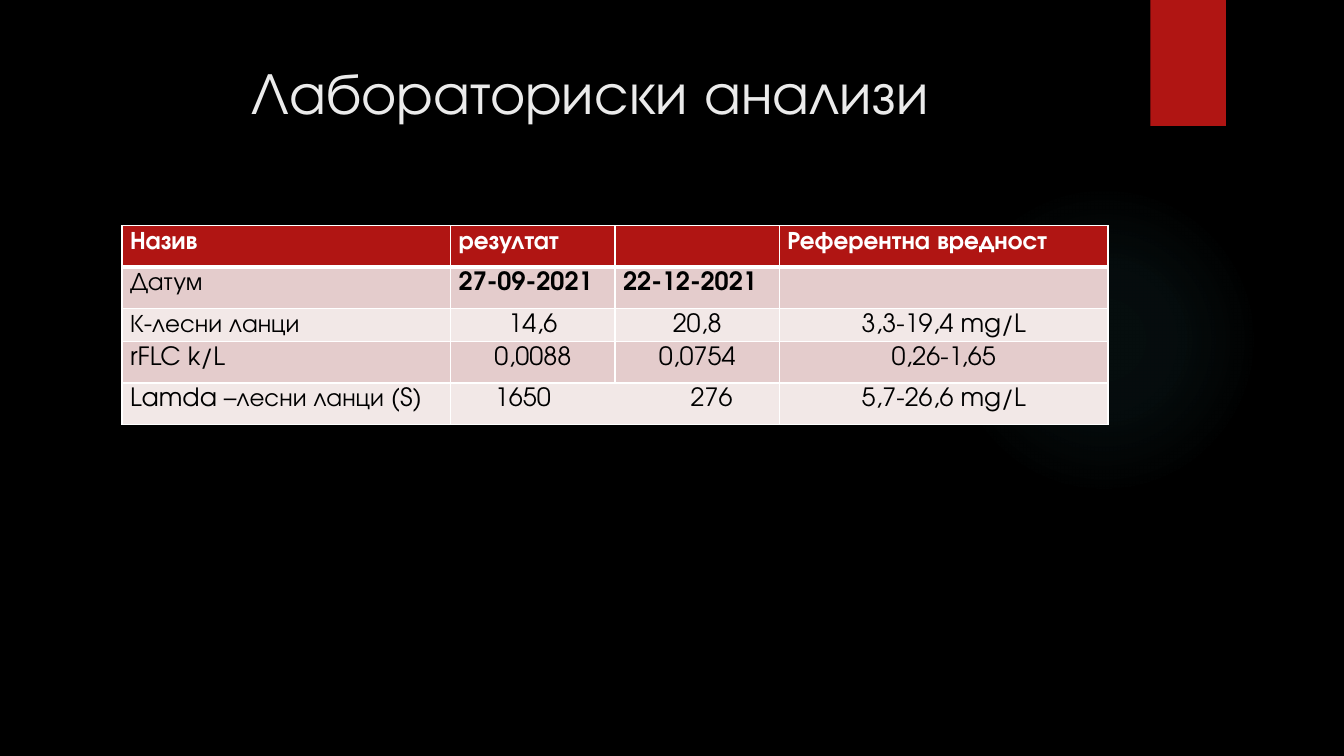
from pptx import Presentation, oxml, util as u
from pptx.dml.color import RGBColor
from pptx.enum import shapes, text
from pptx.oxml.ns import nsdecls

WIDE, HIGH = u.Inches(13.33), u.Inches(7.5)
FONT = "TeX Gyre Adventor"
HUES = {"back": "000000", "red": "B01513", "glow": "50B9C1", "title": "EBEBEB",
        "white": "FFFFFF", "ink": "000000", "dark": "E4CCCC", "light": "F2E8E7"}
ROWS = [
    ["Назив", "резултат", "", "Референтна вредност"],
    ["Датум", "27-09-2021", "22-12-2021", ""],
    ["К-лесни ланци", "14,6", "20,8", "3,3-19,4 mg/L"],
    ["rFLC k/L", "0,0088", "0,0754", "0,26-1,65"],
    ["Lamda –лесни ланци (S)", "1650\t276", "", "5,7-26,6 mg/L"],
]
SHARES = [2, 1, 1, 2]
TALL = [0.41, 0.41, 0.33, 0.41, 0.41]


def hue(name):
    return RGBColor.from_string(HUES[name])


def style(par, size, name, bold=False, align=text.PP_ALIGN.LEFT):
    par.alignment = align
    for run in par.runs:
        font = run.font
        font.name, font.size, font.bold = FONT, u.Pt(size), bold
        font.color.rgb = hue(name)


def add_shape(slide, kind, left, top, wide, high, name):
    shape = slide.shapes.add_shape(kind, *map(u.Inches, (left, top, wide, high)))
    shape.shadow.inherit = False
    shape.fill.solid()
    shape.fill.fore_color.rgb = hue(name)
    shape.line.fill.background()
    return shape


def add_glow(slide):
    oval = add_shape(slide, shapes.MSO_SHAPE.OVAL, 9.41, 1.83, 3.08, 3.08, "glow")
    stops = "".join(
        f'<a:gs pos="{pos * 1000}"><a:srgbClr val="{HUES["glow"]}">'
        f'<a:alpha val="{alpha * 1000}"/></a:srgbClr></a:gs>'
        for pos, alpha in [(0, 7), (36, 6), (69, 0), (100, 0)])
    grad = oxml.parse_xml(
        f'<a:gradFill {nsdecls("a")}><a:gsLst>{stops}</a:gsLst><a:path path="circle">'
        '<a:fillToRect l="50000" t="50000" r="50000" b="50000"/></a:path></a:gradFill>')
    props = oval._element.spPr
    solid = props.find(oxml.ns.qn("a:solidFill"))
    props.replace(solid, grad)


def set_title(slide, words):
    title = slide.shapes.title
    title.left, title.top = u.Inches(0.71), u.Inches(0.5)
    title.width, title.height = u.Inches(10.29), u.Inches(1.53)
    frame = title.text_frame
    frame.text = words
    frame.vertical_anchor = text.MSO_ANCHOR.TOP
    style(frame.paragraphs[0], 42, "title", align=text.PP_ALIGN.CENTER)


def set_edges(cell, row):
    props = cell._tc.get_or_add_tcPr()
    thick = {(0, "B"): 3, (1, "T"): 3}
    for spot, side in enumerate("LRTB"):
        width = u.Pt(thick.get((row, side), 1))
        props.insert(spot, oxml.parse_xml(
            f'<a:ln{side} {nsdecls("a")} w="{width}"><a:solidFill>'
            f'<a:srgbClr val="{HUES["white"]}"/></a:solidFill></a:ln{side}>'))


def set_cell(cell, row, col, words):
    cell.fill.solid()
    cell.fill.fore_color.rgb = hue("red" if row == 0 else "dark" if row % 2 else "light")
    set_edges(cell, row)
    cell.margin_left = cell.margin_right = u.Inches(0.08)
    cell.margin_top, cell.margin_bottom = u.Inches(0.05), 0
    cell.vertical_anchor = text.MSO_ANCHOR.TOP
    par = cell.text_frame.paragraphs[0]
    if not words:
        par.font.size = u.Pt(12)
        return
    paired = "\t" in words
    if paired:
        # Two results share one merged cell
        cell.margin_left = u.Inches(0.44)
        par._p.get_or_add_pPr().append(oxml.parse_xml(
            f'<a:tabLst {nsdecls("a")}><a:tab pos="{u.Inches(1.94)}" algn="l"/></a:tabLst>'))
    par.text = words
    mid = row > 1 and col > 0 and not paired
    bold = row == 0 or (row == 1 and col > 0)
    style(par, 18, "white" if row == 0 else "ink", bold,
          text.PP_ALIGN.CENTER if mid else text.PP_ALIGN.LEFT)


def add_table(slide):
    wide = u.Inches(9.78)
    grid = slide.shapes.add_table(len(ROWS), len(SHARES), u.Inches(1.21), u.Inches(2.24),
                                  wide, u.Inches(sum(TALL))).table
    for col, share in zip(grid.columns, SHARES):
        col.width = wide * share // sum(SHARES)
    for row, high in zip(grid.rows, TALL):
        row.height = u.Inches(high)
    grid.cell(4, 1).merge(grid.cell(4, 2))
    for row, line in enumerate(ROWS):
        for col, words in enumerate(line):
            set_cell(grid.cell(row, col), row, col, words)


def main():
    deck = Presentation()
    deck.slide_width, deck.slide_height = WIDE, HIGH
    slide = deck.slides.add_slide(deck.slide_layouts[5])
    slide.background.fill.solid()
    slide.background.fill.fore_color.rgb = hue("back")
    # Backdrop
    add_glow(slide)
    add_shape(slide, shapes.MSO_SHAPE.RECTANGLE, 11.41, 0, 0.75, 1.25, "red")
    # Content
    set_title(slide, "Лабораториски анализи")
    add_table(slide)
    deck.save("out.pptx")


if __name__ == "__main__":
    main()
